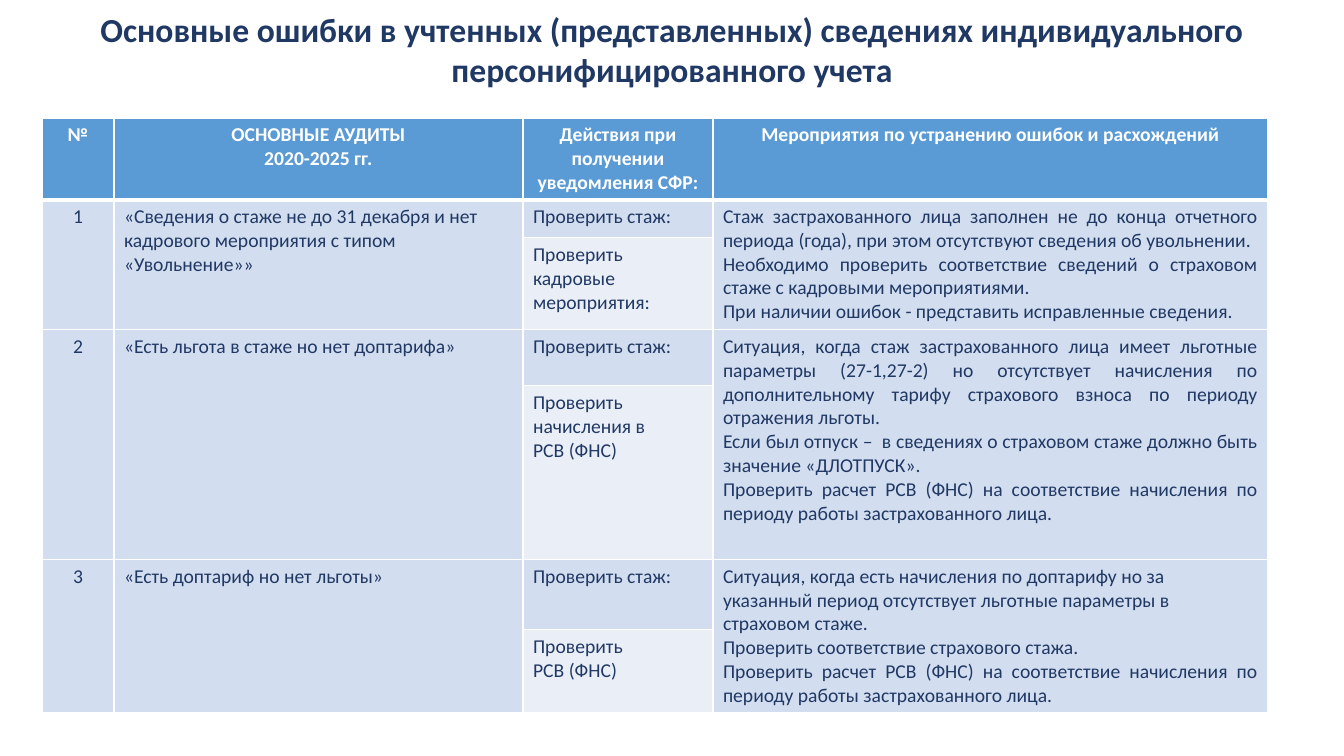
from lxml.etree import SubElement
from pptx import Presentation
from pptx.dml.color import RGBColor
from pptx.enum.text import MSO_ANCHOR, MSO_AUTO_SIZE, PP_ALIGN
from pptx.oxml.ns import qn
from pptx.util import Emu, Pt

# Content
TITLE = "Основные ошибки в учтенных (представленных) сведениях индивидуального персонифицированного учета"
HEADERS = [
    ["№"],
    ["ОСНОВНЫЕ АУДИТЫ", "2020-2025 гг."],
    ["Действия при получении уведомления СФР:"],
    ["Мероприятия по устранению ошибок и расхождений"],
]
CALCULATION_CHECK = "Проверить расчет РСВ (ФНС) на соответствие начисления по периоду работы застрахованного лица."
AUDITS = [
    {
        "error": "«Сведения о стаже не до 31 декабря и нет кадрового мероприятия с типом «Увольнение»»",
        "actions": [["Проверить стаж:"], ["Проверить кадровые мероприятия:"]],
        "remedy": [
            "Стаж застрахованного лица заполнен не до конца отчетного периода (года), "
            "при этом отсутствуют сведения об увольнении.",
            "Необходимо проверить соответствие сведений о страховом стаже с кадровыми мероприятиями.",
            "При наличии ошибок - представить исправленные сведения.",
        ],
        "left_lines": 0,
    },
    {
        "error": "«Есть льгота в стаже но нет доптарифа»",
        "actions": [["Проверить стаж:"], ["Проверить начисления в", "РСВ (ФНС)"]],
        "remedy": [
            "Ситуация, когда стаж застрахованного лица имеет льготные параметры (27-1,27-2) "
            "но отсутствует начисления по дополнительному тарифу страхового взноса "
            "по периоду отражения льготы.",
            "Если был отпуск –  в сведениях о страховом стаже должно быть значение «ДЛОТПУСК».",
            CALCULATION_CHECK,
        ],
        "left_lines": 0,
    },
    {
        "error": "«Есть доптариф но нет льготы»",
        "actions": [["Проверить стаж:"], ["Проверить", "РСВ (ФНС)"]],
        "remedy": [
            "Ситуация, когда есть начисления по доптарифу но за указанный период "
            "отсутствует льготные параметры в страховом стаже.",
            "Проверить соответствие страхового стажа.",
            CALCULATION_CHECK,
        ],
        "left_lines": 2,
    },
]

# Layout in px
PAGE_WIDTH, PAGE_HEIGHT = 1344, 756
TITLE_HEIGHT, TITLE_INSET = 88, 9
TABLE_LEFT, TABLE_TOP = 42, 118
COLUMNS = [72, 409, 190, 555]
ROWS = [81, 38, 92, 56, 174, 70, 83]

FONT = "Calibri"
NAVY, WHITE = "203864", "FFFFFF"
HEADER_FILL, BAND_FILL, PALE_FILL = "5B9BD5", "D2DEEF", "EAEFF7"
LEFT, CENTER, JUSTIFY = PP_ALIGN.LEFT, PP_ALIGN.CENTER, PP_ALIGN.JUSTIFY


def px(length):
    return Emu(round(length * 914400 / 100.8))


def color(value):
    return RGBColor.from_string(value)


def write(frame, lines, aligns, size, ink, bold=False):
    for index, (line, align) in enumerate(zip(lines, aligns)):
        para = frame.paragraphs[0] if index == 0 else frame.add_paragraph()
        para.alignment = align
        span = para.add_run()
        span.text = line
        span.font.name = FONT
        span.font.size = Pt(size)
        span.font.bold = bold
        span.font.color.rgb = color(ink)


def style_cell(cell, fill, top=1, bottom=1):
    # Borders come before the fill in the cell properties
    properties = cell._tc.get_or_add_tcPr()
    for side, width in {"lnL": 1, "lnR": 1, "lnT": top, "lnB": bottom}.items():
        line = SubElement(properties, qn(f"a:{side}"), w=str(Pt(width)))
        solid = SubElement(line, qn("a:solidFill"))
        SubElement(solid, qn("a:srgbClr"), val=WHITE)
    cell.fill.solid()
    cell.fill.fore_color.rgb = color(fill)


def add_title(page):
    title = page.shapes.title
    title.left, title.top = px(0), px(0)
    title.width, title.height = px(PAGE_WIDTH), px(TITLE_HEIGHT)
    frame = title.text_frame
    frame.auto_size = MSO_AUTO_SIZE.NONE
    frame.word_wrap = True
    frame.vertical_anchor = MSO_ANCHOR.TOP
    frame.margin_left = frame.margin_right = frame.margin_bottom = 0
    frame.margin_top = px(TITLE_INSET)
    write(frame, [TITLE], [CENTER], 24, NAVY, bold=True)
    para = frame.paragraphs[0]
    para.line_spacing = 1.0
    para.space_before = Pt(0)


def add_audit_table(page):
    table = page.shapes.add_table(
        len(ROWS), len(COLUMNS), px(TABLE_LEFT), px(TABLE_TOP), px(sum(COLUMNS)), px(sum(ROWS))
    ).table
    for column, width in zip(table.columns, COLUMNS):
        column.width = px(width)
    for row, height in zip(table.rows, ROWS):
        row.height = px(height)

    # Header row
    for column, lines in enumerate(HEADERS):
        cell = table.cell(0, column)
        style_cell(cell, HEADER_FILL, bottom=3)
        write(cell.text_frame, lines, [CENTER] * len(lines), 14, WHITE, bold=True)

    # Each audit takes two rows; only the actions column stays split
    for number, audit in enumerate(AUDITS, start=1):
        first = 2 * number - 1
        for column in range(len(COLUMNS)):
            style_cell(table.cell(first, column), BAND_FILL, top=3 if first == 1 else 1)
            style_cell(table.cell(first + 1, column), PALE_FILL if column == 2 else BAND_FILL)

        remedy_aligns = [
            LEFT if index < audit["left_lines"] else JUSTIFY for index in range(len(audit["remedy"]))
        ]
        merged = {
            0: ([str(number)], [CENTER]),
            1: ([audit["error"]], [LEFT]),
            3: (audit["remedy"], remedy_aligns),
        }
        for column, (lines, aligns) in merged.items():
            cell = table.cell(first, column)
            cell.merge(table.cell(first + 1, column))
            write(cell.text_frame, lines, aligns, 14, NAVY)
        for offset, lines in enumerate(audit["actions"]):
            frame = table.cell(first + offset, 2).text_frame
            write(frame, lines, [LEFT] * len(lines), 14, NAVY)


def main():
    deck = Presentation()
    deck.slide_width, deck.slide_height = px(PAGE_WIDTH), px(PAGE_HEIGHT)
    page = deck.slides.add_slide(deck.slide_layouts[5])
    add_audit_table(page)
    add_title(page)
    deck.save("out.pptx")


if __name__ == "__main__":
    main()
